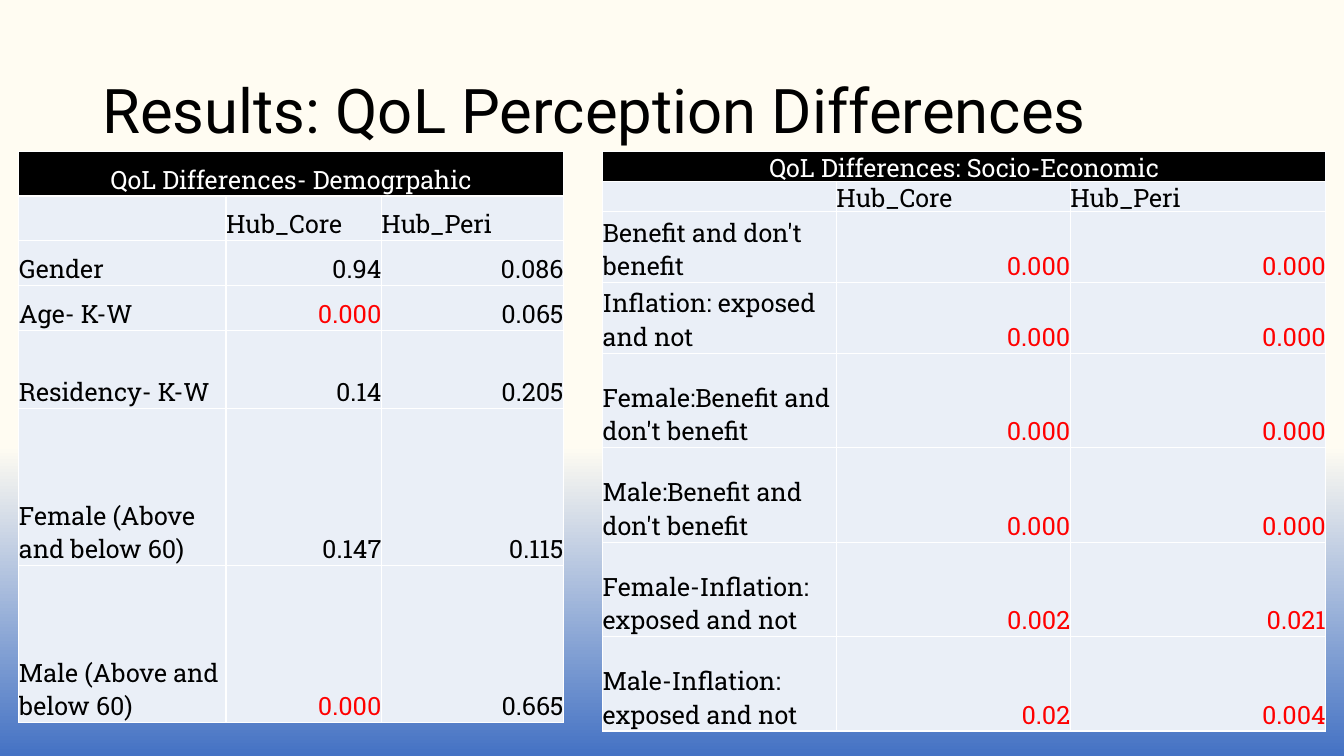
"""Build the slide with two tables of QoL perception differences."""
import pptx
import pptx.dml.color
import pptx.enum.text
import pptx.oxml
import pptx.oxml.ns
import pptx.util

Pt = pptx.util.Pt
RGB = pptx.dml.color.RGBColor.from_string
ALIGN = pptx.enum.text.PP_ALIGN
ANCHOR = pptx.enum.text.MSO_ANCHOR

THEME = {
    "cream": "FFFCF2", "blue": "4472C4", "header": "000000", "body": "EAEFF7",
    "border": "FFFFFF", "text": "000000", "header_text": "FFFFFF", "significant": "FF0000",
    "title_font": "Roboto", "table_font": "Roboto Slab", "title_size": 44, "table_size": 18,
}
COLUMNS = ["", "Hub_Core", "Hub_Peri"]
TABLES = [
    {
        "left": 13.5, "widths": [148, 111, 130],
        "heights": [32] * 4 + [56] + [112] * 2,
        "heading": "QoL Differences- Demogrpahic",
        "rows": [
            ["Gender", "0.94", "0.086"],
            ["Age- K-W", "0.000", "0.065"],
            ["Residency- K-W", "0.14", "0.205"],
            ["Female (Above and below 60)", "0.147", "0.115"],
            ["Male (Above and below 60)", "0.000", "0.665"],
        ],
    },
    {
        "left": 430.5, "widths": [167, 167, 182.5],
        "heights": [19.5] * 2 + [50.5] * 2 + [67.5] * 4,
        "heading": "QoL Differences: Socio-Economic",
        "rows": [
            ["Benefit and don't benefit", "0.000", "0.000"],
            ["Inflation: exposed and not", "0.000", "0.000"],
            ["Female:Benefit and don't benefit", "0.000", "0.000"],
            ["Male:Benefit and don't benefit", "0.000", "0.000"],
            ["Female-Inflation: exposed and not", "0.002", "0.021"],
            ["Male-Inflation: exposed and not", "0.02", "0.004"],
        ],
    },
]


def add_run(p, text, font, size, color):
    r = p.add_run()
    r.text = text
    for name, value in {"name": font, "size": Pt(size)}.items():
        setattr(r.font, name, value)
    r.font.color.rgb = RGB(color)


def format_cell(cell, fill):
    tcPr = cell._tc.get_or_add_tcPr()
    for side in ("lnL", "lnR", "lnT", "lnB"):
        tcPr.append(pptx.oxml.parse_xml(
            f'<a:{side} {pptx.oxml.ns.nsdecls("a")} w="{Pt(1)}"><a:solidFill>'
            f'<a:srgbClr val="{THEME["border"]}"/></a:solidFill></a:{side}>'))
    cell.fill.solid()
    cell.fill.fore_color.rgb = RGB(fill)
    cell.vertical_anchor = ANCHOR.BOTTOM
    for side in ("left", "right", "top", "bottom"):
        setattr(cell, f"margin_{side}", 0)


prs = pptx.Presentation()
prs.slide_width, prs.slide_height = Pt(960), Pt(540)
s = prs.slides.add_slide(prs.slide_layouts[6])

bg = s.background.fill
bg.gradient()
bg.gradient_angle = 270
for stop, position, color in zip(bg.gradient_stops, (0.59, 1), ("cream", "blue")):
    stop.position = position
    stop.color.rgb = RGB(THEME[color])

tf = s.shapes.add_textbox(Pt(66), Pt(28.75), Pt(828), Pt(104.5)).text_frame
for name, value in {"word_wrap": True, "vertical_anchor": ANCHOR.MIDDLE}.items():
    setattr(tf, name, value)
p = tf.paragraphs[0]
p.line_spacing = 0.9
add_run(p, "Results: QoL Perception Differences",
        THEME["title_font"], THEME["title_size"], THEME["text"])

for spec_table in TABLES:
    widths, heights = spec_table["widths"], spec_table["heights"]
    table = s.shapes.add_table(len(heights), len(widths), Pt(spec_table["left"]), Pt(108),
                               Pt(sum(widths)), Pt(sum(heights))).table
    for column, width in zip(table.columns, widths):
        column.width = Pt(width)
    for row, height in zip(table.rows, heights):
        row.height = Pt(height)
    table.cell(0, 0).merge(table.cell(0, len(widths) - 1))

    content = [[spec_table["heading"], "", ""], COLUMNS] + spec_table["rows"]
    for i, texts in enumerate(content):
        for j, text in enumerate(texts):
            cell = table.cell(i, j)
            format_cell(cell, THEME["header" if i == 0 else "body"])
            if not text:
                continue
            p = cell.text_frame.paragraphs[0]
            color = "text"
            if i == 0:
                p.alignment, color = ALIGN.CENTER, "header_text"
            elif i > 1 and j > 0:
                p.alignment = ALIGN.RIGHT
                color = "significant" if float(text) < 0.05 else "text"
            add_run(p, text, THEME["table_font"], THEME["table_size"], THEME[color])

prs.save("out.pptx")
